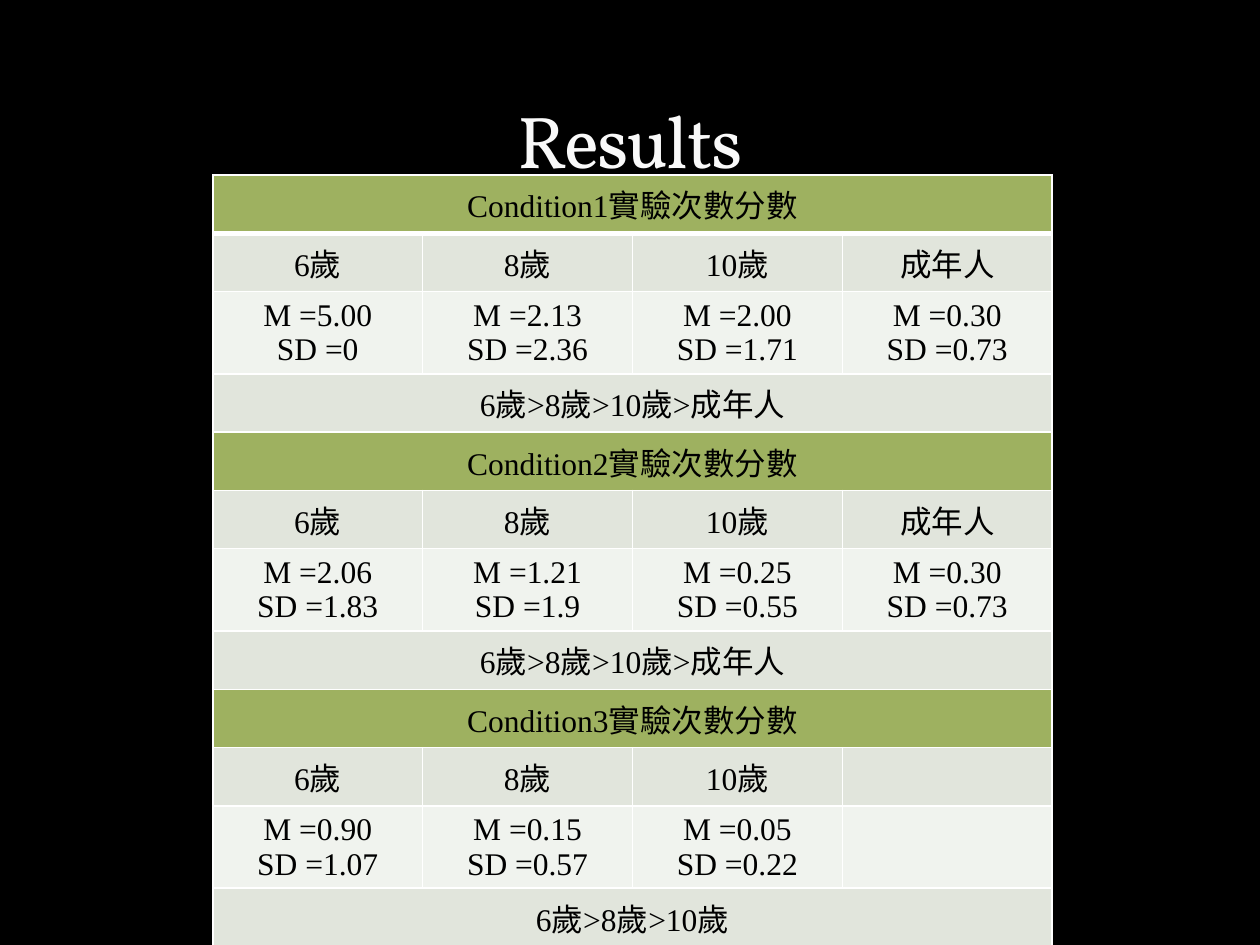
"""Build the Results slide with a table of scores by condition and age."""
from lxml import etree
from pptx import Presentation
from pptx.dml.color import RGBColor
from pptx.enum import text
from pptx.oxml import ns
from pptx.util import Cm, Pt

THEME = {
    "background": "000000", "title": "F9F9F9", "outline": "3C4422",
    "text": "000000", "header": "9EB160", "band": "E1E5DC",
    "scores": "F0F3EE", "border": "FFFFFF",
    "title_font": "Vollkorn", "body_font": "Times New Roman",
    "title_size": 42, "body_size": 18, "border_width": 1, "header_rule": 3,
}
TITLE = "Results"
AGES = ["6歲", "8歲", "10歲", "成年人"]
CONDITIONS = [
    ("Condition1實驗次數分數",
     [("5.00", "0"), ("2.13", "2.36"), ("2.00", "1.71"), ("0.30", "0.73")]),
    ("Condition2實驗次數分數",
     [("2.06", "1.83"), ("1.21", "1.9"), ("0.25", "0.55"), ("0.30", "0.73")]),
    ("Condition3實驗次數分數",
     [("0.90", "1.07"), ("0.15", "0.57"), ("0.05", "0.22")]),
]
TITLE_BOX = (1.27, 0.43, 22.86, 3.39)
TABLE_LEFT, TABLE_TOP = 4.29, 3.53
COLUMN_WIDTH, ROW_HEIGHT = 4.23, 1.03


def color(name):
    return RGBColor.from_string(THEME[name])


def fill(target, name):
    target.fill.solid()
    target.fill.fore_color.rgb = color(name)


def make_line(tag, width, name, alpha=100):
    line = etree.Element(ns.qn(f"a:{tag}"), w=str(Pt(width)))
    solid = etree.SubElement(line, ns.qn("a:solidFill"))
    tint = etree.SubElement(solid, ns.qn("a:srgbClr"), val=THEME[name])
    if alpha < 100:
        etree.SubElement(tint, ns.qn("a:alpha"), val=str(alpha * 1000))
    return line


def format_text(frame, font, size, name):
    for para in frame.paragraphs:
        para.alignment = text.PP_ALIGN.CENTER
        for span in para.runs:
            span.font.name = font
            span.font.size = Pt(size)
            span.font.color.rgb = color(name)


def add_title(slide):
    title = slide.shapes.title
    title.left, title.top, title.width, title.height = map(Cm, TITLE_BOX)
    frame = title.text_frame
    frame.text = TITLE
    frame.vertical_anchor = text.MSO_ANCHOR.BOTTOM
    format_text(frame, THEME["title_font"], THEME["title_size"], "title")
    properties = frame.paragraphs[0].runs[0].font._element
    properties.set("spc", "-100")
    properties.insert(0, make_line("ln", 0.25, "outline", 25))


def table_rows():
    for heading, scores in CONDITIONS:
        ages = AGES[:len(scores)]
        yield "header", [heading], True
        yield "band", ages, False
        yield "scores", [f"M ={mean}\nSD ={deviation}" for mean, deviation in scores], False
        yield "band", [">".join(ages)], True


def format_cell(cell, fill_name, row):
    fill(cell, fill_name)
    format_text(cell.text_frame, THEME["body_font"], THEME["body_size"], "text")
    thin, thick = THEME["border_width"], THEME["header_rule"]
    widths = {"lnL": thin, "lnR": thin,
              "lnT": thick if row == 1 else thin, "lnB": thick if row == 0 else thin}
    properties = cell._tc.get_or_add_tcPr()
    for position, (tag, width) in enumerate(widths.items()):
        properties.insert(position, make_line(tag, width, "border"))


def add_scores(slide):
    rows = list(table_rows())
    columns = len(AGES)
    table = slide.shapes.add_table(
        len(rows), columns, Cm(TABLE_LEFT), Cm(TABLE_TOP),
        Cm(COLUMN_WIDTH * columns), Cm(ROW_HEIGHT * len(rows))).table
    table.first_row = table.horz_banding = False
    for column in table.columns:
        column.width = Cm(COLUMN_WIDTH)
    for row, (fill_name, values, merged) in enumerate(rows):
        table.rows[row].height = Cm(ROW_HEIGHT)
        if merged:
            table.cell(row, 0).merge(table.cell(row, columns - 1))
        for column, value in enumerate(values):
            table.cell(row, column).text = value
        for column in range(columns):
            format_cell(table.cell(row, column), fill_name, row)


def main():
    deck = Presentation()
    deck.slide_width, deck.slide_height = Cm(25.4), Cm(19.05)
    slide = deck.slides.add_slide(deck.slide_layouts[5])
    fill(slide.background, "background")
    add_title(slide)
    add_scores(slide)
    deck.save("out.pptx")


if __name__ == "__main__":
    main()
